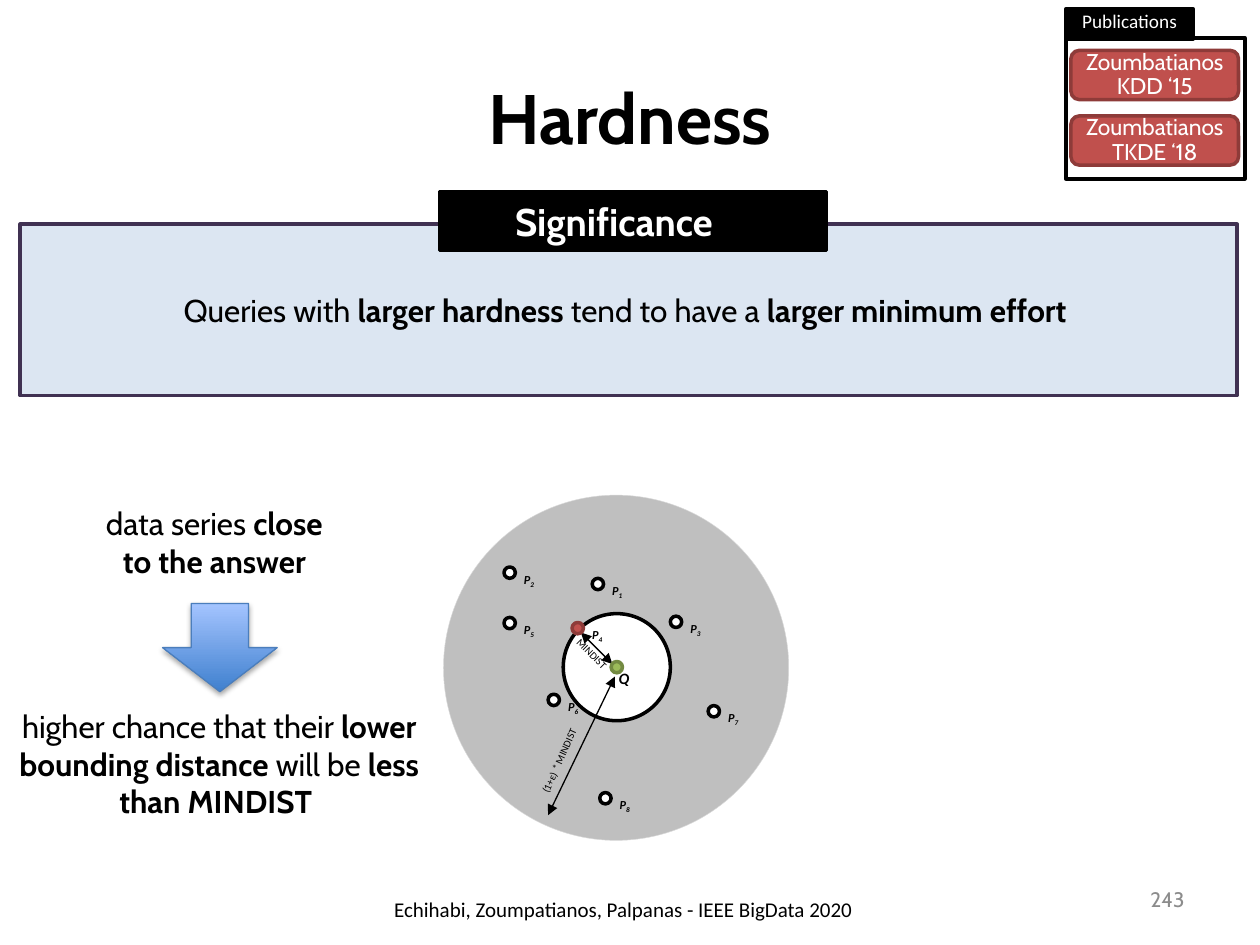
"""Build the slide on query hardness and its significance."""
from typing import NamedTuple, Optional

from lxml.etree import SubElement
from pptx import Presentation
from pptx.dml.color import RGBColor
from pptx.enum.shapes import MSO_CONNECTOR, MSO_SHAPE as SHAPE
from pptx.enum.text import MSO_ANCHOR as ANCHOR, PP_ALIGN as ALIGN
from pptx.oxml.ns import qn
from pptx.util import Inches, Pt

BLACK = RGBColor(0x00, 0x00, 0x00)
WHITE = RGBColor(0xFF, 0xFF, 0xFF)
PANEL = RGBColor(0xDC, 0xE6, 0xF2)
PURPLE = RGBColor(0x40, 0x31, 0x52)
GREY = RGBColor(0xBF, 0xBF, 0xBF)
LIGHT_GREY = RGBColor(0xD9, 0xD9, 0xD9)
NUMBER_GREY = RGBColor(0x8C, 0x8C, 0x8C)
RED = RGBColor(0xC0, 0x50, 0x4D)
DARK_RED = RGBColor(0x8E, 0x3B, 0x39)
GREEN = RGBColor(0x9B, 0xBB, 0x59)
DARK_GREEN = RGBColor(0x73, 0x8A, 0x42)
ARROW_DARK = RGBColor(0x3F, 0x80, 0xCE)
ARROW_LIGHT = RGBColor(0xA4, 0xC4, 0xFF)
ARROW_LINE = RGBColor(0x4B, 0x7E, 0xBC)
DOT = 0.09


class Style(NamedTuple):
    size: float
    font: str = "Cabin"
    color: RGBColor = BLACK
    italic: bool = False


class Run(NamedTuple):
    text: str
    bold: bool = False
    subscript: bool = False


class Point(NamedTuple):
    index: int
    x: float
    y: float
    fill: RGBColor = WHITE
    line: RGBColor = BLACK


class Publication(NamedTuple):
    venue: str
    y: float


BODY = Style(18)
POINT_LABEL = Style(7, "Calibri", italic=True)
DISTANCE = Style(6, "Calibri")

POINTS = [
    Point(4, 4.54, 4.94, RED, DARK_RED),
    Point(2, 4, 4.5),
    Point(5, 4, 4.9),
    Point(1, 4.7, 4.59),
    Point(6, 4.35, 5.51),
    Point(3, 5.32, 4.89),
    Point(7, 5.62, 5.6),
    Point(8, 4.76, 6.29),
]
PUBLICATIONS = [Publication("KDD ‘15", 0.4), Publication("TKDE ‘18", 0.92)]


def add_runs(p, runs: list[Run], style: Style, align: ALIGN = ALIGN.LEFT) -> None:
    p.alignment = align
    for run in runs:
        r = p.add_run()
        r.text = run.text
        r.font.size, r.font.name = Pt(style.size), style.font
        r.font.color.rgb = style.color
        r.font.bold, r.font.italic = run.bold, style.italic
        if run.subscript:
            r.font._element.set("baseline", "-25000")


def add_box(shapes, kind: SHAPE, x: float, y: float, w: float, h: float,
            fill: Optional[RGBColor], line: RGBColor, width: float = 2):
    sp = shapes.add_shape(kind, Inches(x), Inches(y), Inches(w), Inches(h))
    sp.shadow.inherit = False
    if fill is not None:
        sp.fill.solid()
        sp.fill.fore_color.rgb = fill
    sp.line.color.rgb, sp.line.width = line, Pt(width)
    return sp


def add_text(shapes, x: float, y: float, w: float, h: float, paragraphs: list[list[Run]],
             style: Style, align: ALIGN = ALIGN.LEFT, wrap: bool = True, rotation: float = 0):
    sp = shapes.add_textbox(Inches(x), Inches(y), Inches(w), Inches(h))
    sp.rotation = rotation
    tf = sp.text_frame
    tf.word_wrap = wrap
    for i, runs in enumerate(paragraphs):
        add_runs(tf.add_paragraph() if i else tf.paragraphs[0], runs, style, align)
    return sp


def add_distance(shapes, x1: float, y1: float, x2: float, y2: float) -> None:
    cxn = shapes.add_connector(MSO_CONNECTOR.STRAIGHT, Inches(x1), Inches(y1), Inches(x2), Inches(y2))
    cxn.line.color.rgb, cxn.line.width = BLACK, Pt(0.75)
    ln = cxn.line._get_or_add_ln()
    for end in ("a:headEnd", "a:tailEnd"):
        SubElement(ln, qn(end), type="triangle")
    SubElement(cxn._element.spPr, qn("a:effectLst"))


def add_point(shapes, point: Point) -> None:
    add_box(shapes, SHAPE.OVAL, point.x, point.y, DOT, DOT, point.fill, point.line)
    runs = [Run("P", True), Run(str(point.index), True, True)]
    add_text(shapes, point.x + 0.06, point.y - 0.01, 0.32, 0.22, [runs], POINT_LABEL)


def add_diagram(shapes) -> None:
    outer = add_box(shapes, SHAPE.DONUT, 3.52, 3.93, 2.74, 2.74, GREY, LIGHT_GREY, 0.25)
    outer.adjustments[0] = 0.486
    inner = add_box(shapes, SHAPE.DONUT, 4.47, 4.87, 0.85, 0.85, WHITE, BLACK)
    inner.adjustments[0] = 0.46
    add_distance(shapes, 4.86, 5.27, 4.61, 5.02)
    add_box(shapes, SHAPE.OVAL, 4.85, 5.25, DOT, DOT, GREEN, DARK_GREEN)
    query = add_text(shapes, 4.89, 5.26, 0.12, 0.25, [[Run("Q", True)]],
                     Style(9, "Calibri", italic=True), wrap=False)
    query.text_frame.margin_left = query.text_frame.margin_right = Inches(0.02)
    for point in POINTS:
        add_point(shapes, point)
    add_text(shapes, 4.45, 5.09, 0.5, 0.2, [[Run("MINDIST")]], DISTANCE, wrap=False, rotation=45)
    add_distance(shapes, 4.35, 6.47, 4.88, 5.37)
    add_text(shapes, 4.06, 5.93, 0.76, 0.2, [[Run("(1+ε) * MINDIST")]], DISTANCE,
             wrap=False, rotation=294.1)


def add_down_arrow(shapes) -> None:
    sp = add_box(shapes, SHAPE.DOWN_ARROW, 1.29, 4.79, 0.91, 0.7, None, ARROW_LINE, 0.75)
    sp.fill.gradient()
    sp.fill.gradient_angle = 90
    for stop, color in zip(sp.fill.gradient_stops, (ARROW_DARK, ARROW_LIGHT)):
        stop.color.rgb = color
    effects = sp._element.spPr.find(qn("a:effectLst"))
    shadow = SubElement(effects, qn("a:outerShdw"), blurRad=str(Pt(3.1)), dist=str(Pt(1.8)),
                        dir="5400000", rotWithShape="0")
    color = SubElement(shadow, qn("a:srgbClr"), val=str(BLACK))
    SubElement(color, qn("a:alpha"), val="35000")


def add_publications(shapes) -> None:
    add_box(shapes, SHAPE.RECTANGLE, 8.46, 0.3, 1.42, 1.12, WHITE, BLACK)
    tab = add_box(shapes, SHAPE.RECTANGLE, 8.46, 0.07, 1.01, 0.24, BLACK, BLACK)
    tab.text_frame.vertical_anchor = ANCHOR.BOTTOM
    add_runs(tab.text_frame.paragraphs[0], [Run("Publications")],
             Style(11, "Calibri", WHITE), ALIGN.CENTER)
    for publication in PUBLICATIONS:
        sp = add_box(shapes, SHAPE.ROUNDED_RECTANGLE, 8.5, publication.y, 1.33, 0.39, RED, DARK_RED)
        tf = sp.text_frame
        tf.margin_left = tf.margin_right = tf.margin_top = tf.margin_bottom = 0
        tf.vertical_anchor = ANCHOR.MIDDLE
        p = tf.paragraphs[0]
        p.line_spacing = 0.9
        style = Style(13, color=WHITE)
        add_runs(p, [Run("Zoumbatianos")], style, ALIGN.CENTER)
        p.add_line_break()
        add_runs(p, [Run(publication.venue)], style, ALIGN.CENTER)


def main() -> None:
    prs = Presentation()
    prs.slide_width, prs.slide_height = Inches(10), Inches(7.5)
    s = prs.slides.add_slide(prs.slide_layouts[5])
    title = s.shapes.title
    title.left, title.top, title.width, title.height = map(Inches, (0.5, 0.3, 9, 1.25))
    title.text_frame.vertical_anchor = ANCHOR.MIDDLE
    add_runs(title.text_frame.paragraphs[0], [Run("Hardness", True)], Style(40), ALIGN.CENTER)

    panel = add_box(s.shapes, SHAPE.RECTANGLE, 0.16, 1.78, 9.66, 1.36, PANEL, PURPLE)
    panel.text_frame.vertical_anchor = ANCHOR.MIDDLE
    add_runs(panel.text_frame.paragraphs[0],
             [Run("Queries with "), Run("larger hardness ", True), Run("tend to have a "),
              Run("larger minimum effort ", True)], BODY, ALIGN.CENTER)
    heading = add_box(s.shapes, SHAPE.RECTANGLE, 3.49, 1.52, 3.07, 0.47, BLACK, BLACK)
    heading.text_frame.vertical_anchor = ANCHOR.TOP
    p = heading.text_frame.paragraphs[0]
    p.level = 1
    p._p.get_or_add_pPr().set("marL", str(Inches(0.5)))
    add_runs(p, [Run("Significance", True)], Style(22, color=WHITE))

    add_text(s.shapes, -0.12, 3.95, 3.7, 0.71,
             [[Run("data series "), Run("close ", True)], [Run("to the answer ", True)]],
             BODY, ALIGN.CENTER)
    add_diagram(s.shapes.add_group_shape().shapes)
    add_text(s.shapes, 0.02, 5.56, 3.44, 1.01,
             [[Run("higher chance that their "), Run("lower bounding distance", True),
               Run(" will be "), Run("less than MINDIST ", True)]], BODY, ALIGN.CENTER)
    add_down_arrow(s.shapes)
    number = add_text(s.shapes, 7.17, 6.94, 2.33, 0.4, [[Run("243")]],
                      Style(12, color=NUMBER_GREY), ALIGN.RIGHT)
    number.text_frame.vertical_anchor = ANCHOR.MIDDLE
    add_text(s.shapes, 3.03, 7.07, 3.87, 0.4,
             [[Run("Echihabi, Zoumpatianos, Palpanas - IEEE BigData 2020")]], Style(12, "Calibri"))
    add_publications(s.shapes)
    prs.save("out.pptx")


if __name__ == "__main__":
    main()
